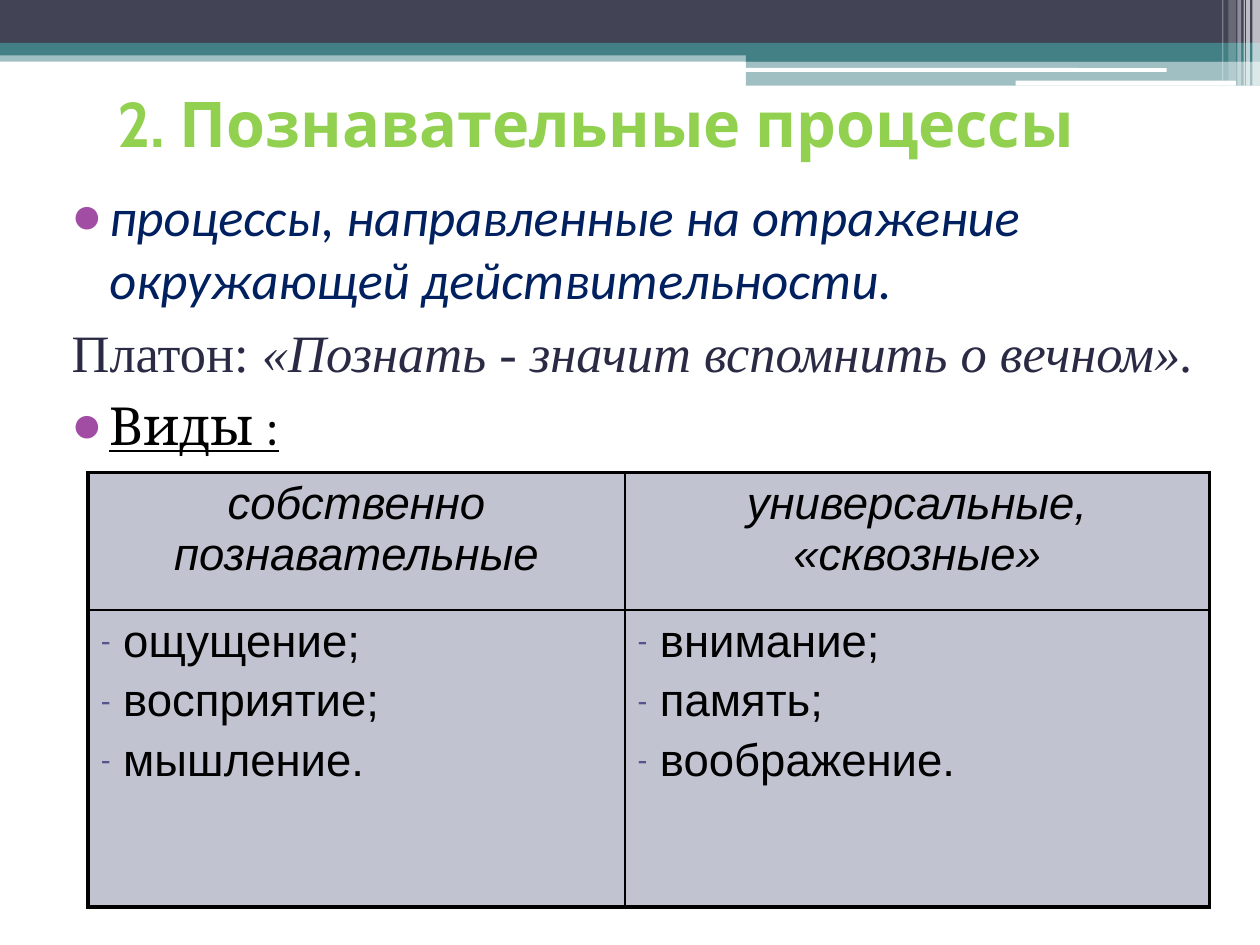
from lxml.etree import SubElement
from pptx import Presentation
from pptx.dml.color import RGBColor
from pptx.enum.shapes import MSO_SHAPE
from pptx.enum.text import MSO_ANCHOR, PP_ALIGN
from pptx.oxml import parse_xml
from pptx.oxml.ns import nsdecls, qn
from pptx.util import Inches, Pt

WHITE = RGBColor(0xFF, 0xFF, 0xFF)
BLACK = RGBColor(0, 0, 0)
SLATE = RGBColor(0x42, 0x44, 0x56)
TEAL = RGBColor(0x43, 0x80, 0x86)
GREEN = RGBColor(0x92, 0xD0, 0x50)
NAVY = RGBColor(0x00, 0x20, 0x60)
INK = RGBColor(0x2A, 0x2A, 0x45)
PLUM = RGBColor(0xA0, 0x4D, 0xA3)
INDIGO = RGBColor(0x53, 0x54, 0x8A)
GREY = RGBColor(0x85, 0x88, 0xA2)

RECT = MSO_SHAPE.RECTANGLE
ROUND = MSO_SHAPE.ROUNDED_RECTANGLE
BARS = [
    (RECT, 0, 0.4, 10, 0.09, TEAL, 50),
    (RECT, 0, 0, 10, 0.34, SLATE, 100),
    (RECT, 0, 0.34, 10, 0.1, TEAL, 100),
    (RECT, 5.92, 0.39, 4.08, 0.1, TEAL, 100),
    (RECT, 5.92, 0.48, 4.08, 0.2, TEAL, 50),
    (ROUND, 5.91, 0.54, 3.35, 0.03, WHITE, 100),
    (ROUND, 8.06, 0.64, 1.75, 0.04, WHITE, 100),
]
STRIPES = [
    (9.94, 0.06, 0.68, 65),
    (9.89, 0.03, 0.68, 65),
    (9.87, 0.01, 0.68, 60),
    (9.82, 0.03, 0.68, 40),
    (9.75, 0.06, 0.64, 20),
    (9.7, 0.01, 0.64, 30),
]
HEADS = ["собственно познавательные", "универсальные, «сквозные»"]
LISTS = [
    [" ощущение;", " восприятие;", " мышление."],
    [" внимание;", " память;", " воображение."],
]


def fade(node, pct):
    """Set the opacity of the first colour found in a node."""
    tint = node.find(".//" + qn("a:srgbClr"))
    SubElement(tint, qn("a:alpha"), val=str(pct * 1000))


def add_bar(slide, kind, left, top, width, height, color, pct):
    """Add one plain band of the header."""
    bar = slide.shapes.add_shape(
        kind, Inches(left), Inches(top), Inches(width), Inches(height))
    bar.shadow.inherit = False
    bar.fill.solid()
    bar.fill.fore_color.rgb = color
    bar.line.fill.background()
    if pct < 100:
        fade(bar.element.spPr, pct)


def add_run(para, text, size, font, color, **marks):
    """Add a run with its font settings."""
    run = para.add_run()
    run.text = text
    run.font.size = Pt(size)
    run.font.name = font
    run.font.color.rgb = color
    for mark, value in marks.items():
        setattr(run.font, mark, value)


def add_bullet(para, sign, color, size=100):
    """Give a paragraph a coloured bullet sign."""
    props = para._p.get_or_add_pPr()
    tint = SubElement(props, qn("a:buClr"))
    SubElement(tint, qn("a:srgbClr"), val=str(color))
    SubElement(props, qn("a:buSzPct"), val=str(size * 1000))
    SubElement(props, qn("a:buFont"), typeface="Arial")
    SubElement(props, qn("a:buChar"), char=sign)


def next_para(frame, first):
    """Return the first paragraph or a new one."""
    return frame.paragraphs[0] if first else frame.add_paragraph()


def set_title(slide):
    """Place and fill the title."""
    title = slide.shapes.title
    title.left, title.top = Inches(0.23), Inches(0.47)
    title.width, title.height = Inches(9), Inches(1)
    frame = title.text_frame
    frame.vertical_anchor = MSO_ANCHOR.MIDDLE
    para = frame.paragraphs[0]
    para.alignment = PP_ALIGN.CENTER
    add_run(para, "2. Познавательные процессы", 36, "Cabin", GREEN, bold=True)


def add_body(slide):
    """Add the definition, the quotation and the list lead."""
    box = slide.shapes.add_textbox(
        Inches(0.47), Inches(1.41), Inches(9.15), Inches(5.85))
    frame = box.text_frame
    frame.word_wrap = True
    paras = []
    for num in range(3):
        para = next_para(frame, num == 0)
        para.space_before = Pt(5.8)
        props = para._p.get_or_add_pPr()
        props.set("marL", str(Inches(0.3)))
        props.set("indent", str(Inches(-0.3)))
        paras.append(para)
    goal, quote, lead = paras
    add_bullet(goal, "●", PLUM)
    add_run(goal, "процессы, направленные на отражение окружающей "
            "действительности.", 30, "Calibri", NAVY, italic=True)
    add_run(quote, "Платон: ", 30, "Times New Roman", INK)
    add_run(quote, "«Познать - значит вспомнить о вечном».", 30,
            "Times New Roman", INK, italic=True)
    add_bullet(lead, "●", PLUM)
    add_run(lead, "Виды :", 30, "Cambria", BLACK, underline=True)


def set_edges(props, row, col):
    """Draw thick outer and thin inner borders of a cell."""
    thick = {"L": col == 0, "R": col == 1, "T": row == 0, "B": row == 1}
    for spot, (side, outer) in enumerate(thick.items()):
        width = Pt(2.25 if outer else 1)
        props.insert(spot, parse_xml(
            f'<a:ln{side} {nsdecls("a")} w="{width}"><a:solidFill>'
            f'<a:srgbClr val="{BLACK}"/></a:solidFill></a:ln{side}>'))


def fill_cell(cell, row, col):
    """Write and style one table cell."""
    lines = LISTS[col] if row else [HEADS[col]]
    for num, text in enumerate(lines):
        para = next_para(cell.text_frame, num == 0)
        para.space_before = Pt(5)
        if row:
            add_bullet(para, "-", INDIGO, 65)
        else:
            para.alignment = PP_ALIGN.CENTER
        add_run(para, text, 26, "Arial", BLACK, bold=False, italic=not row)
    cell.fill.solid()
    cell.fill.fore_color.rgb = GREY
    props = cell._tc.get_or_add_tcPr()
    fade(props, 50)
    set_edges(props, row, col)


def add_grid(slide):
    """Add the table of process kinds."""
    table = slide.shapes.add_table(
        2, 2, Inches(0.7), Inches(3.75), Inches(8.9), Inches(3.45)).table
    table.first_row = table.horz_banding = False
    for col, width in zip(table.columns, (4.26, 4.64)):
        col.width = Inches(width)
    for row, height in zip(table.rows, (1.09, 2.36)):
        row.height = Inches(height)
    for row in range(2):
        for col in range(2):
            fill_cell(table.cell(row, col), row, col)


def main():
    """Build the slide and save it."""
    deck = Presentation()
    deck.slide_width, deck.slide_height = Inches(10), Inches(7.5)
    slide = deck.slides.add_slide(deck.slide_layouts[5])
    for bar in BARS:
        add_bar(slide, *bar)
    for left, width, height, pct in STRIPES:
        add_bar(slide, RECT, left, 0, width, height, WHITE, pct)
    set_title(slide)
    add_body(slide)
    add_grid(slide)
    deck.save("out.pptx")


if __name__ == "__main__":
    main()
